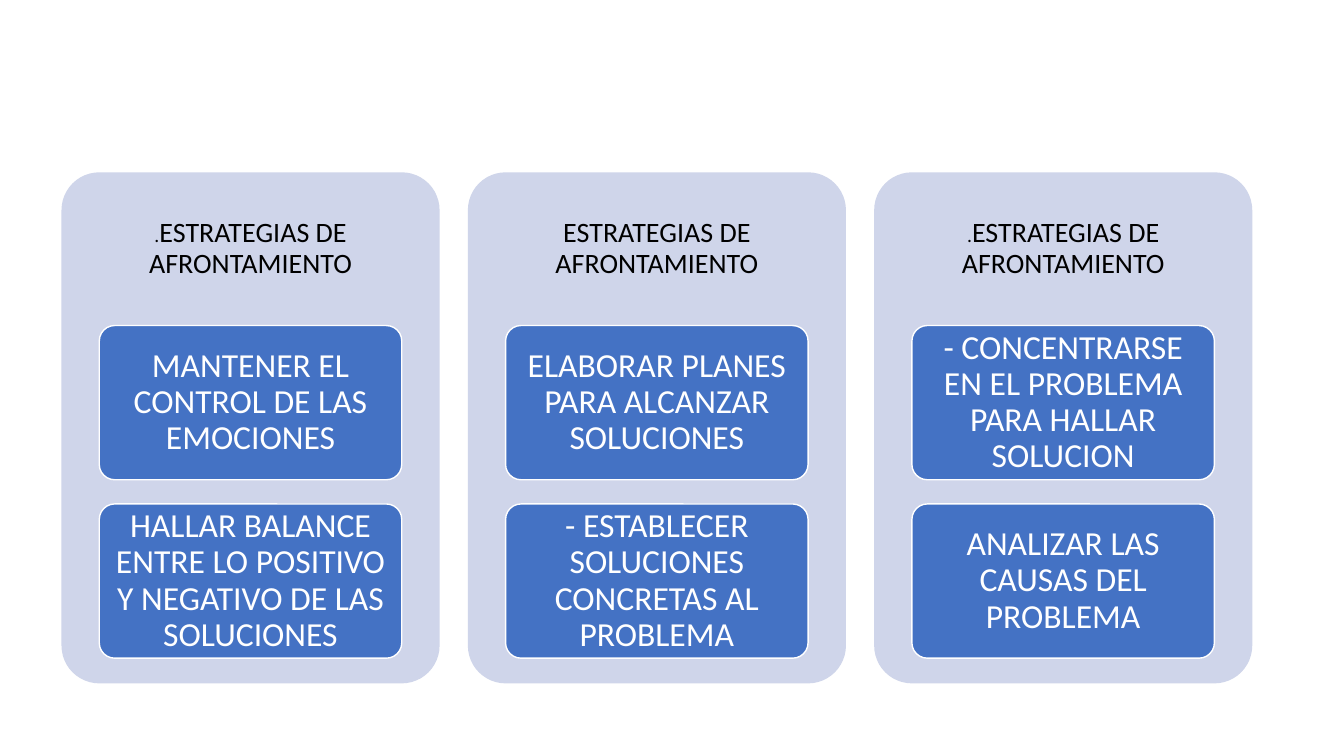
from dataclasses import dataclass

from pptx import Presentation
from pptx import util as u
from pptx.dml.color import RGBColor
from pptx.enum import shapes, text


@dataclass(frozen=True)
class Theme:
    font: str = "Calibri"
    panel: str = "CFD5EA"
    card: str = "4472C4"
    light: str = "FFFFFF"
    dark: str = "000000"
    dot: int = 14
    head: int = 20
    body: int = 24
    edge: int = 1
    round: float = 0.1


@dataclass(frozen=True)
class Grid:
    """Columns and rows, in inches."""
    left: float = 0.61
    top: float = 1.71
    wide: float = 3.75
    high: float = 5.07
    step: float = 4.03
    head: float = 1.52
    inset: float = 0.375
    card_wide: float = 3.0
    card_high: float = 1.53
    card_step: float = 1.77

    def col(self, num: int) -> float:
        return self.left + num * self.step

    def row(self, num: int) -> float:
        return self.top + self.head + num * self.card_step


@dataclass(frozen=True)
class Column:
    dot: str
    pad: float
    cards: tuple[str, ...]


THEME = Theme()
GRID = Grid()
TITLE = "ESTRATEGIAS DE AFRONTAMIENTO"
COLUMNS = (
    Column(".", 0.06, (
        "MANTENER EL CONTROL DE LAS EMOCIONES",
        "HALLAR BALANCE ENTRE LO POSITIVO Y NEGATIVO DE LAS SOLUCIONES")),
    Column("", 0.08, (
        "ELABORAR PLANES PARA ALCANZAR SOLUCIONES",
        "- ESTABLECER SOLUCIONES CONCRETAS AL PROBLEMA")),
    Column(".", 0.06, (
        "- CONCENTRARSE EN EL PROBLEMA PARA HALLAR SOLUCION",
        "ANALIZAR LAS CAUSAS DEL PROBLEMA")),
)


def write(shape, *runs: tuple[str, int], color: str, pad_x: float, pad_y: float) -> None:
    """Fill a shape with one centred paragraph of (words, size) runs."""
    frame = shape.text_frame
    frame.word_wrap = True
    frame.vertical_anchor = text.MSO_ANCHOR.MIDDLE
    frame.margin_left = frame.margin_right = u.Inches(pad_x)
    frame.margin_top = frame.margin_bottom = u.Inches(pad_y)
    para = frame.paragraphs[0]
    para.alignment = text.PP_ALIGN.CENTER
    para.line_spacing = 0.9
    for words, size in runs:
        run = para.add_run()
        run.text = words
        run.font.name = THEME.font
        run.font.size = u.Pt(size)
        run.font.color.rgb = RGBColor.from_string(color)


def block(slide, x: float, y: float, w: float, h: float, fill: str, line: str = ""):
    """Draw a rounded box, with an outline if a line colour is given."""
    box = slide.shapes.add_shape(
        shapes.MSO_SHAPE.ROUNDED_RECTANGLE, *map(u.Inches, (x, y, w, h)))
    box.adjustments[0] = THEME.round
    box.shadow.inherit = False
    box.fill.solid()
    box.fill.fore_color.rgb = RGBColor.from_string(fill)
    if line:
        box.line.color.rgb = RGBColor.from_string(line)
        box.line.width = u.Pt(THEME.edge)
    else:
        box.line.fill.background()
    return box


def draw(slide, num: int, column: Column) -> None:
    x = GRID.col(num)
    # Panel and heading
    block(slide, x, GRID.top, GRID.wide, GRID.high, THEME.panel)
    head = slide.shapes.add_textbox(
        *map(u.Inches, (x, GRID.top, GRID.wide, GRID.head)))
    runs = [(column.dot, THEME.dot)] if column.dot else []
    write(head, *runs, (TITLE, THEME.head), color=THEME.dark,
          pad_x=column.pad, pad_y=column.pad)
    # Strategy cards
    for row, words in enumerate(column.cards):
        card = block(slide, x + GRID.inset, GRID.row(row), GRID.card_wide,
                     GRID.card_high, THEME.card, THEME.light)
        write(card, (words, THEME.body), color=THEME.light, pad_x=0.07, pad_y=0.05)


def main() -> None:
    deck = Presentation()
    deck.slide_width, deck.slide_height = u.Inches(13.33), u.Inches(7.5)
    slide = deck.slides.add_slide(deck.slide_layouts[6])
    for num, column in enumerate(COLUMNS):
        draw(slide, num, column)
    deck.save("out.pptx")


if __name__ == "__main__":
    main()
